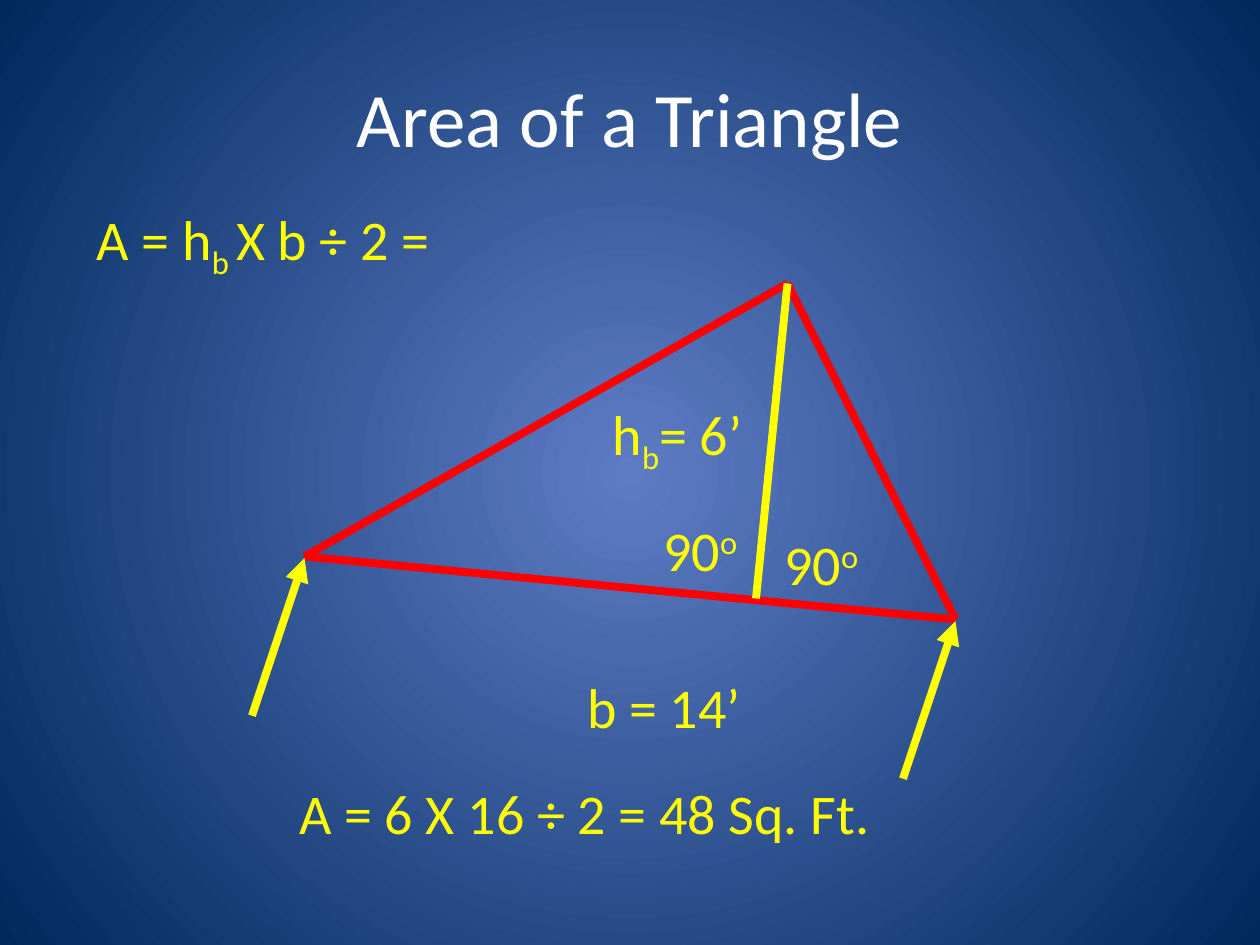
import pptx
import pptx.dml.color
import pptx.enum.text
import pptx.enum.shapes
import pptx.oxml.ns
import pptx.util
from lxml import etree

Pt = pptx.util.Pt
RGBColor = pptx.dml.color.RGBColor
qn = pptx.oxml.ns.qn

WHITE = RGBColor(0xFF, 0xFF, 0xFF)
YELLOW = RGBColor(0xFF, 0xFF, 0x00)
RED = RGBColor(0xFF, 0x00, 0x00)
CENTER_BLUE = RGBColor(0x5E, 0x7C, 0xC5)
EDGE_BLUE = RGBColor(0x00, 0x29, 0x5C)


class TriangleSlide:
    font_name = "Calibri"
    title_size = Pt(44)
    text_size = Pt(32)
    line_width = Pt(4.5)

    def __init__(self, presentation):
        self.slide = presentation.slides.add_slide(presentation.slide_layouts[1])

    def background(self, center_color, edge_color):
        fill = self.slide.background.fill
        fill.gradient()
        for stop, color, position in zip(
            fill.gradient_stops, (center_color, edge_color), (0, 1)
        ):
            stop.color.rgb = color
            stop.position = position
        gradient = self.slide.element.find(".//" + qn("a:gradFill"))
        gradient.remove(gradient.find(qn("a:lin")))
        circle = etree.Element(qn("a:path"), path="circle")
        etree.SubElement(
            circle, qn("a:fillToRect"), l="50000", t="50000", r="50000", b="50000"
        )
        gradient.find(qn("a:gsLst")).addnext(circle)

    def place(self, shape, left, top, width, height):
        shape.left, shape.top = Pt(left), Pt(top)
        shape.width, shape.height = Pt(width), Pt(height)

    def add_runs(self, paragraph, runs, size, color):
        for text, baseline in runs:
            run = paragraph.add_run()
            run.text = text
            run.font.name = self.font_name
            run.font.size = size
            run.font.color.rgb = color
            if baseline:
                run.font._element.set("baseline", str(baseline * 1000))

    def title(self, text, *box):
        shape = self.slide.shapes.title
        self.place(shape, *box)
        shape.text_frame.vertical_anchor = pptx.enum.text.MSO_ANCHOR.MIDDLE
        paragraph = shape.text_frame.paragraphs[0]
        paragraph.alignment = pptx.enum.text.PP_ALIGN.CENTER
        self.add_runs(paragraph, [(text, 0)], self.title_size, WHITE)

    def body(self, runs, *box):
        shape = self.slide.placeholders[1]
        self.place(shape, *box)
        paragraph = shape.text_frame.paragraphs[0]
        properties = paragraph._p.get_or_add_pPr()
        properties.set("marL", "0")
        properties.set("indent", "0")
        etree.SubElement(properties, qn("a:buNone"))
        self.add_runs(paragraph, runs, self.text_size, YELLOW)

    def label(self, runs, left, top, width):
        shape = self.slide.shapes.add_textbox(Pt(left), Pt(top), Pt(width), Pt(46))
        shape.text_frame.word_wrap = False
        shape.text_frame.auto_size = pptx.enum.text.MSO_AUTO_SIZE.SHAPE_TO_FIT_TEXT
        self.add_runs(shape.text_frame.paragraphs[0], runs, self.text_size, YELLOW)

    def line(self, start, end, color, arrow=False):
        connector = self.slide.shapes.add_connector(
            pptx.enum.shapes.MSO_CONNECTOR.STRAIGHT, *map(Pt, start + end)
        )
        connector.line.color.rgb = color
        connector.line.width = self.line_width
        properties = connector._element.spPr
        if arrow:
            etree.SubElement(properties.find(qn("a:ln")), qn("a:tailEnd"), type="triangle")
        etree.SubElement(properties, qn("a:effectLst"))


def main():
    presentation = pptx.Presentation()
    presentation.slide_width, presentation.slide_height = Pt(720), Pt(540)
    page = TriangleSlide(presentation)
    page.background(CENTER_BLUE, EDGE_BLUE)
    page.title("Area of a Triangle", 36, 21.6, 648, 90)
    page.body([("A = h", 0), ("b ", -25), ("X b ÷ 2 =", 0)], 48, 113, 648, 356)

    left_corner, apex, right_corner = (174, 318), (450, 162), (546, 354)
    height_foot = (432, 342)
    page.line(left_corner, apex, RED)
    page.line(right_corner, apex, RED)
    page.line(right_corner, left_corner, RED)
    page.line(apex, height_foot, YELLOW)

    right_angle = [("90", 0), ("o", 30)]
    page.label(right_angle, 372, 291, 59)
    page.label(right_angle, 441, 299, 59)
    page.label([("b = 14’", 0)], 328.5, 381, 102)
    page.label([("h", 0), ("b", -25), ("= 6’", 0)], 343, 224.5, 91)

    for x, y in (left_corner, right_corner):
        page.line((x - 30, y + 91), (x, y + 1), YELLOW, arrow=True)

    page.label([("A = 6 X 16 ÷ 2 = 48 Sq. Ft.", 0)], 164, 441.5, 342)
    presentation.save("out.pptx")


if __name__ == "__main__":
    main()
